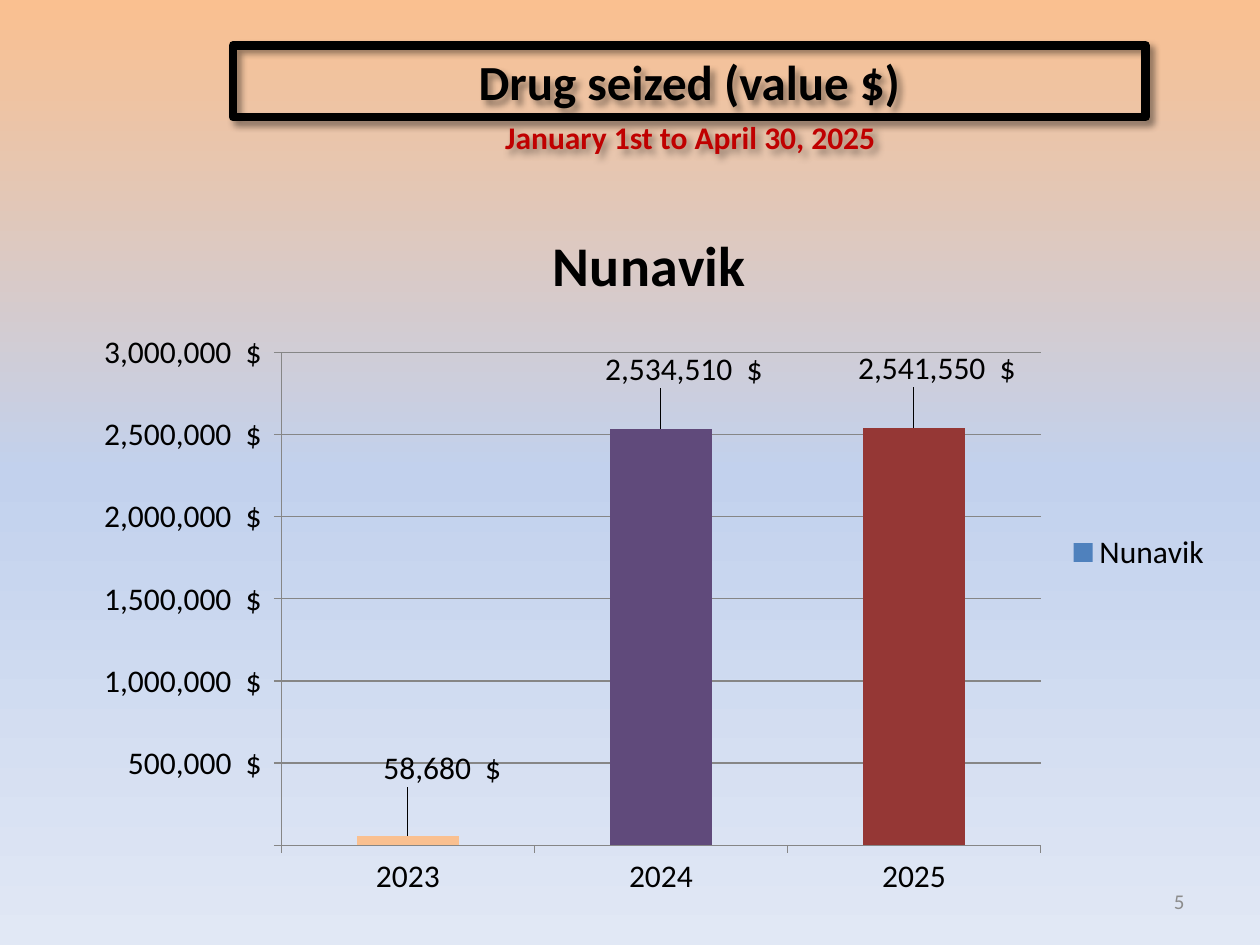
"""Build the slide on the value of drugs seized in Nunavik."""
from dataclasses import dataclass

from pptx import Presentation
from pptx.chart.data import CategoryChartData as Data
from pptx.dml.color import RGBColor as RGB
from pptx.enum.chart import XL_CHART_TYPE as Kind
from pptx.enum.chart import XL_LABEL_POSITION as Spot
from pptx.enum.chart import XL_LEGEND_POSITION as Side
from pptx.enum.chart import XL_TICK_MARK as Tick
from pptx.enum.shapes import MSO_SHAPE as Shape
from pptx.enum.text import MSO_ANCHOR as Anchor
from pptx.enum.text import PP_ALIGN as Align
from pptx.oxml import parse_xml
from pptx.oxml.ns import nsdecls
from pptx.util import Inches, Pt


@dataclass
class Theme:
    font: str = "Calibri"
    ink: str = "000000"
    red: str = "C00000"
    gray: str = "8C8C8C"
    grid: str = "868686"
    blue: str = "4F81BD"
    bars: tuple = ("FAC090", "604A7B", "953735")
    sky: tuple = ((0, "FAC090"), (50, "C2D1ED"), (100, "E1E8F5"))
    huge: int = 32
    head: int = 28
    body: int = 18
    small: int = 12


theme = Theme()


def style(font, size, color, bold=False):
    font.name, font.size, font.bold = theme.font, Pt(size), bold
    font.color.rgb = RGB.from_string(color)


def write(shape, text, size, color, align, bold=True, anchor=Anchor.TOP, shade=True):
    frame = shape.text_frame
    frame.word_wrap = True
    frame.vertical_anchor = anchor
    para = frame.paragraphs[0]
    para.alignment = align
    run = para.add_run()
    run.text = text
    style(run.font, size, color, bold)
    if shade:
        shape._element.spPr.append(parse_xml(
            f'<a:effectLst {nsdecls("a")}><a:outerShdw blurRad="50800" dist="38100" '
            f'dir="2700000" algn="tl" rotWithShape="0"><a:srgbClr val="{theme.ink}">'
            '<a:alpha val="40000"/></a:srgbClr></a:outerShdw></a:effectLst>'))


deck = Presentation()
deck.slide_width, deck.slide_height = Inches(10), Inches(7.5)
slide = deck.slides.add_slide(deck.slide_layouts[6])
shapes = slide.shapes

fill = slide.background.fill
fill.gradient()
fill.gradient_angle = 270
stops = slide.background._cSld.xpath(".//a:gsLst")[0]
for stop in list(stops):
    stops.remove(stop)
for place, color in theme.sky:
    stops.append(parse_xml(
        f'<a:gs {nsdecls("a")} pos="{place * 1000}"><a:srgbClr val="{color}"/></a:gs>'))

data = Data(number_format='_ * #,##0_)\\ "$"_ ;_ * \\(#,##0\\)\\ "$"_ ;')
data.categories = ["2023", "2024", "2025"]
data.add_series("Nunavik", [58680, 2534510, 2541550])
chart = shapes.add_chart(Kind.COLUMN_CLUSTERED, Inches(0.59), Inches(1.55),
                         Inches(9.13), Inches(5.67), data).chart
style(chart.font, theme.body, theme.ink)
chart.has_title = True
title = chart.chart_title.text_frame.paragraphs[0].add_run()
title.text = "Nunavik"
style(title.font, theme.huge, theme.ink, True)
chart.has_legend = True
chart.legend.position = Side.RIGHT
chart.legend.include_in_layout = False

axis = chart.value_axis
axis.minimum_scale, axis.maximum_scale, axis.major_unit = 0, 3000000, 500000
axis.has_major_gridlines = True
for line in (axis.format.line, axis.major_gridlines.format.line,
             chart.category_axis.format.line):
    line.width = Pt(0.75)
    line.color.rgb = RGB.from_string(theme.grid)
for each in (axis, chart.category_axis):
    each.major_tick_mark = Tick.OUTSIDE

area = chart._chartSpace.xpath("c:chart/c:plotArea")[0]
for old in area.xpath("c:layout"):
    area.remove(old)
area.insert(0, parse_xml(
    f'<c:layout {nsdecls("c")}><c:manualLayout><c:layoutTarget val="inner"/>'
    '<c:xMode val="edge"/><c:yMode val="edge"/><c:x val="0.18"/><c:y val="0.22"/>'
    '<c:w val="0.66"/><c:h val="0.69"/></c:manualLayout></c:layout>'))

plot = chart.plots[0]
plot.gap_width = 150
plot.vary_by_categories = False
bars = plot.series[0]
bars.format.fill.solid()
bars.format.fill.fore_color.rgb = RGB.from_string(theme.blue)
bars.data_labels.show_value = True
shifts = ((0.03, -0.06), (0.02, -0.05), (0.02, -0.05))
for spot, (color, (right, down)) in enumerate(zip(theme.bars, shifts)):
    point = bars.points[spot]
    point.format.fill.solid()
    point.format.fill.fore_color.rgb = RGB.from_string(color)
    point.data_label.position = Spot.OUTSIDE_END
    mark = bars._element.xpath(f'c:dLbls/c:dLbl/c:idx[@val="{spot}"]')[0]
    mark.addnext(parse_xml(
        f'<c:layout {nsdecls("c")}><c:manualLayout><c:x val="{right}"/>'
        f'<c:y val="{down}"/></c:manualLayout></c:layout>'))

box = shapes.add_shape(Shape.RECTANGLE, Inches(1.85), Inches(0.36), Inches(7.24), Inches(0.57))
box.fill.background()
box.line.width = Pt(5)
box.line.color.rgb = RGB.from_string(theme.ink)
write(box, "Drug seized (value $)", theme.head, theme.ink, Align.CENTER)

dates = shapes.add_textbox(Inches(1.86), Inches(0.89), Inches(7.24), Inches(0.4))
write(dates, "January 1st to April 30, 2025", theme.body, theme.red, Align.CENTER)

number = shapes.add_textbox(Inches(7.17), Inches(6.95), Inches(2.33), Inches(0.4))
write(number, "5", theme.small, theme.gray, Align.RIGHT, False, Anchor.MIDDLE, False)

deck.save("out.pptx")
